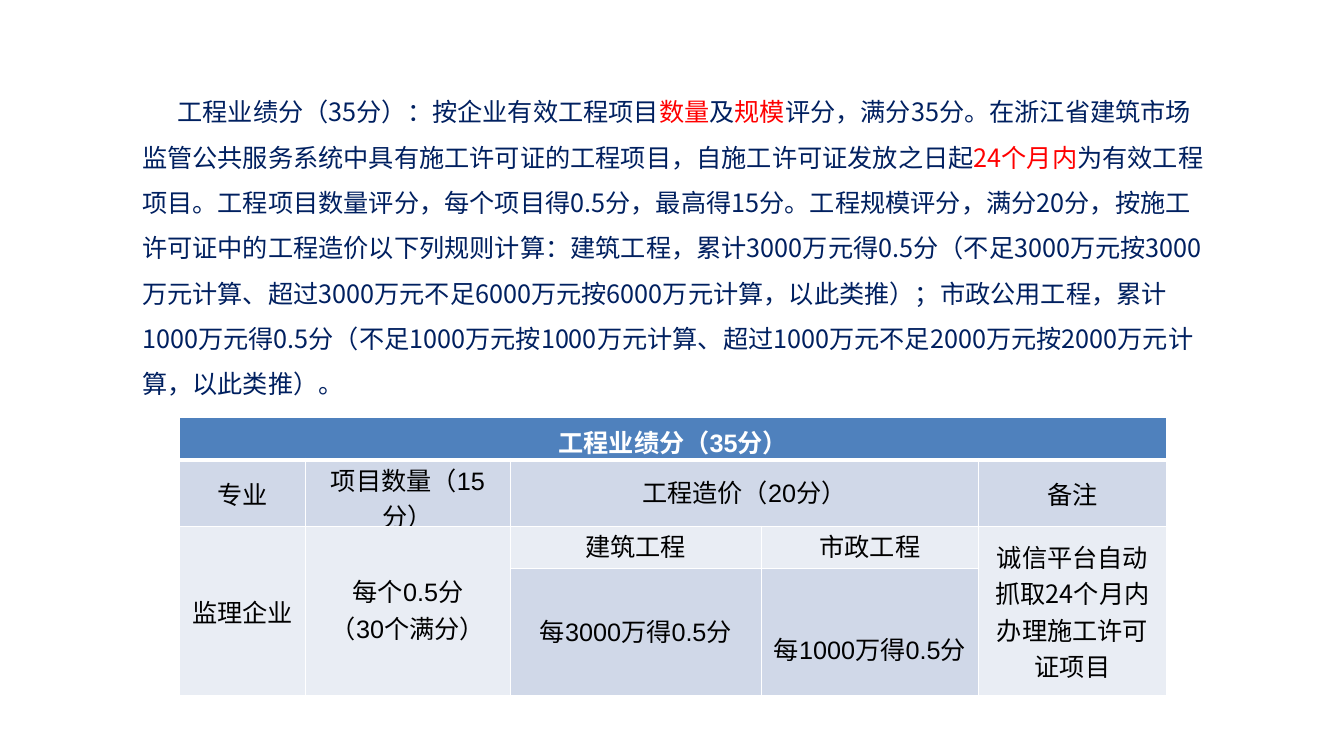
from lxml.etree import SubElement
from pptx import Presentation
from pptx.dml.color import RGBColor
from pptx.enum.text import MSO_ANCHOR, MSO_AUTO_SIZE, PP_ALIGN
from pptx.oxml.ns import qn
from pptx.util import Pt

COLORS = {
    "navy": "002060", "red": "FF0000", "white": "FFFFFF", "black": "000000",
    "header": "4F81BD", "dark": "D0D8E8", "light": "E9EDF4",
}
LATIN, CJK = "Arial", "Noto Sans CJK SC"

INTRO = [
    ("工程业绩分（35分）：按企业有效工程项目", "navy"),
    ("数量", "red"),
    ("及", "navy"),
    ("规模", "red"),
    ("评分，满分35分。在浙江省建筑市场监管公共服务系统中具有施工许可证的工程项目，"
     "自施工许可证发放之日起", "navy"),
    ("24个月内", "red"),
    ("为有效工程项目。工程项目数量评分，每个项目得0.5分，最高得15分。"
     "工程规模评分，满分20分，按施工许可证中的工程造价以下列规则计算："
     "建筑工程，累计3000万元得0.5分（不足3000万元按3000万元计算、"
     "超过3000万元不足6000万元按6000万元计算，以此类推）；"
     "市政公用工程，累计1000万元得0.5分（不足1000万元按1000万元计算、"
     "超过1000万元不足2000万元按2000万元计算，以此类推）。", "navy"),
]

COL_WIDTHS = [90, 146, 179.5, 155, 134.5]
ROW_HEIGHTS = [30, 47, 30, 91]
ROWS = [
    ["工程业绩分（35分）", "", "", "", ""],
    ["专业", "项目数量（15分）", "工程造价（20分）", "", "备注"],
    ["监理企业", "每个0.5分\n（30个满分）", "建筑工程", "市政工程",
     "诚信平台自动抓取24个月内办理施工许可证项目"],
    ["", "", "每3000万得0.5分", "每1000万得0.5分", ""],
]
ROW_FILLS = ["header", "dark", "light", "dark"]
MERGES = [((0, 0), (0, 4)), ((1, 2), (1, 3)),
          ((2, 0), (3, 0)), ((2, 1), (3, 1)), ((2, 4), (3, 4))]


def rgb(name):
    return RGBColor.from_string(COLORS[name])


def format_run(r, color, font=LATIN, bold=False):
    r.font.size = Pt(18)
    r.font.bold = bold
    r.font.name = font
    r.font.color.rgb = rgb(color)
    SubElement(r._r.get_or_add_rPr(), qn("a:ea"), typeface=CJK)


def add_intro(s):
    sp = s.shapes.add_textbox(Pt(94.5), Pt(54.7), Pt(780.5), Pt(203.8))
    tf = sp.text_frame
    tf.word_wrap = True
    tf.auto_size = MSO_AUTO_SIZE.SHAPE_TO_FIT_TEXT
    p = tf.paragraphs[0]
    p.line_spacing = 1.5
    p._p.get_or_add_pPr().set("indent", str(Pt(25.2)))
    for text, color in INTRO:
        r = p.add_run()
        r.text = text
        format_run(r, color, CJK)


def set_borders(cell, widths):
    tcPr = cell._tc.get_or_add_tcPr()
    for side, width in zip("LRTB", widths):
        ln = SubElement(tcPr, qn(f"a:ln{side}"), w=str(Pt(width)))
        fill = SubElement(ln, qn("a:solidFill"))
        SubElement(fill, qn("a:srgbClr"), val=COLORS["white"])


def fill_cell(cell, row, col, text):
    header = row == 0
    set_borders(cell, (1, 1, 3 if row == 1 else 1, 3 if header else 1))
    cell.fill.solid()
    cell.fill.fore_color.rgb = rgb(ROW_FILLS[row])
    cell.vertical_anchor = MSO_ANCHOR.TOP if header else MSO_ANCHOR.MIDDLE
    if not header and col in (1, 2, 3):
        cell.margin_left = cell.margin_right = cell.margin_top = Pt(0.75)
    if not text:
        return
    cell.text_frame.text = text
    for p in cell.text_frame.paragraphs:
        p.alignment = PP_ALIGN.CENTER
        for r in p.runs:
            format_run(r, "white" if header else "black",
                       CJK if (row, col) == (2, 4) else LATIN, header)


def add_score_table(s):
    table = s.shapes.add_table(len(ROWS), len(COL_WIDTHS), Pt(128.4), Pt(298.4),
                               Pt(sum(COL_WIDTHS)), Pt(sum(ROW_HEIGHTS))).table
    for column, width in zip(table.columns, COL_WIDTHS):
        column.width = Pt(width)
    for row, height in zip(table.rows, ROW_HEIGHTS):
        row.height = Pt(height)
    for i, texts in enumerate(ROWS):
        for j, text in enumerate(texts):
            fill_cell(table.cell(i, j), i, j, text)
    for first, last in MERGES:
        table.cell(*first).merge(table.cell(*last))
    # The municipal score sits lower in its cell
    table.cell(3, 3).margin_top = Pt(27)


def main():
    prs = Presentation()
    prs.slide_width, prs.slide_height = Pt(960), Pt(540)
    s = prs.slides.add_slide(prs.slide_layouts[6])
    add_intro(s)
    add_score_table(s)
    prs.save("out.pptx")


if __name__ == "__main__":
    main()
